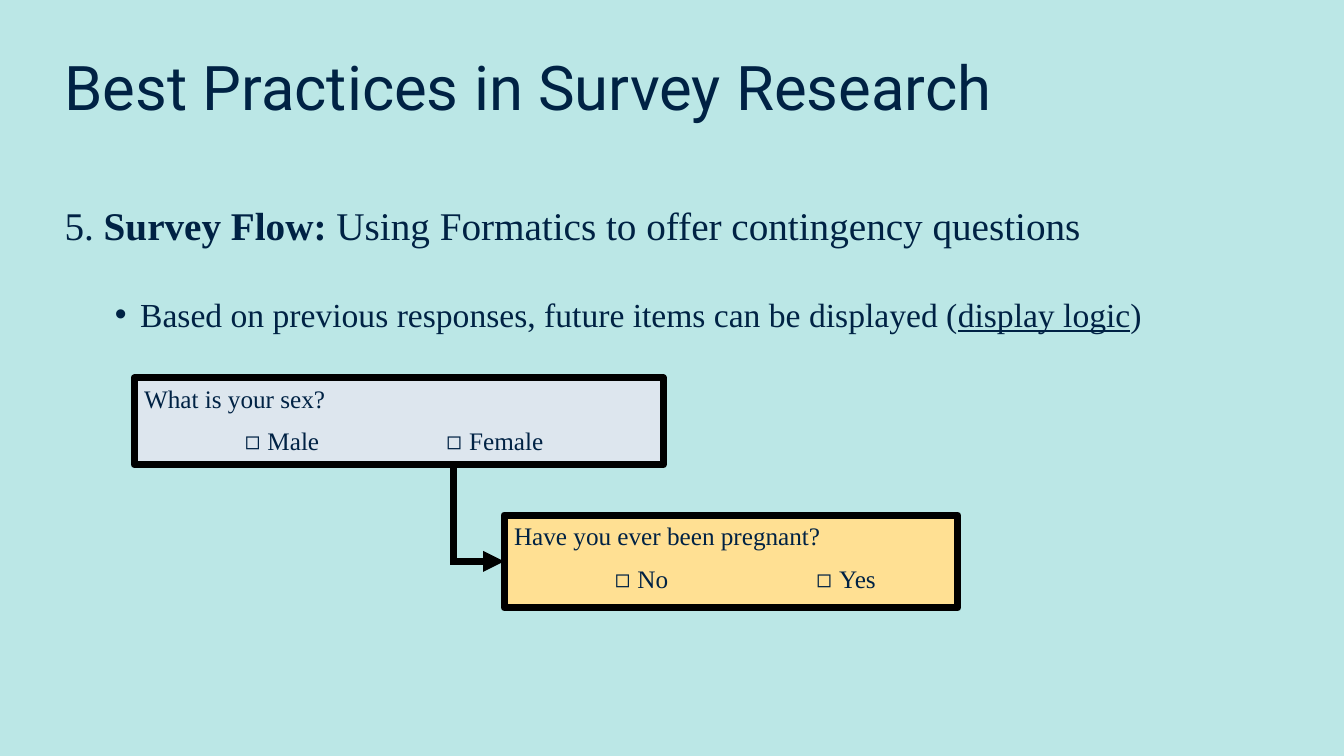
from lxml import etree
from pptx import Presentation
from pptx.dml.color import RGBColor
from pptx.enum import shapes, text
from pptx.oxml.ns import qn
from pptx.util import Inches, Pt

NAVY = RGBColor(0x00, 0x22, 0x44)
BLACK = RGBColor(0x00, 0x00, 0x00)
AQUA = RGBColor(0xBB, 0xE7, 0xE6)
PALE_BLUE = RGBColor(0xDD, 0xE6, 0xEE)
YELLOW = RGBColor(0xFF, 0xE0, 0x93)
SERIF = "Times New Roman"
BORDER = Pt(5)

# Content: text pieces are (text, style)
TITLE = "Best Practices in Survey Research"
HEADING = [("5. ", None), ("Survey Flow: ", "bold"),
           ("Using Formatics to offer contingency questions", None)]
BULLET = [("Based on previous responses, future items can be displayed (", None),
          ("display logic", "underline"), (")", None)]
QUESTIONS = [  # question, options, fill, (left, top, width, height)
    ("What is your sex?", ["Male", "Female"], PALE_BLUE, (1.33, 3.75, 5.25, 0.86)),
    ("Have you ever been pregnant?", ["No", "Yes"], YELLOW, (5, 5.11, 4.5, 0.92)),
]
OPTION_TABS = [1, 3]
BRANCH_X = 4.5


def set_font(paragraph, size, name=SERIF):
    paragraph.font.size = Pt(size)
    paragraph.font.name = name
    paragraph.font.color.rgb = NAVY


def add_runs(paragraph, pieces):
    for words, style in pieces:
        run = paragraph.add_run()
        run.text = words
        if style == "bold":
            run.font.bold = True
        elif style == "underline":
            run.font.underline = True


def set_bullet(paragraph, character, margin, indent):
    properties = paragraph._p.get_or_add_pPr()
    properties.set("marL", str(Inches(margin)))
    properties.set("indent", str(Inches(indent)))
    if character:
        etree.SubElement(properties, qn("a:buFont")).set("typeface", "Arial")
        etree.SubElement(properties, qn("a:buChar")).set("char", character)
    else:
        etree.SubElement(properties, qn("a:buNone"))


def place(shape, left, top, width, height):
    shape.left, shape.top = Inches(left), Inches(top)
    shape.width, shape.height = Inches(width), Inches(height)


def add_question(slide, question, options, fill, box):
    shape = slide.shapes.add_shape(shapes.MSO_SHAPE.RECTANGLE, *map(Inches, box))
    shape.shadow.inherit = False
    shape.fill.solid()
    shape.fill.fore_color.rgb = fill
    shape.line.color.rgb = BLACK
    shape.line.width = BORDER
    frame = shape.text_frame
    frame.word_wrap = True
    frame.vertical_anchor = text.MSO_ANCHOR.TOP

    prompt = frame.paragraphs[0]
    prompt.text = question
    choices = frame.add_paragraph()
    choices.space_before = Pt(9)
    tabs = etree.SubElement(choices._p.get_or_add_pPr(), qn("a:tabLst"))
    for position in OPTION_TABS:
        tab = etree.SubElement(tabs, qn("a:tab"))
        tab.set("pos", str(Inches(position)))
        tab.set("algn", "l")
    for option in options:
        add_runs(choices, [("\t", None), ("◻ ", None), (option, None)])
        choices.runs[-2].font.name = "Arial"
    for paragraph in (prompt, choices):
        paragraph.alignment = text.PP_ALIGN.LEFT
        set_font(paragraph, 18)


def add_line(slide, start, end, arrow=False):
    line = slide.shapes.add_connector(
        shapes.MSO_CONNECTOR.STRAIGHT, *map(Inches, start + end))
    line.line.color.rgb = BLACK
    line.line.width = BORDER
    if arrow:
        tail = etree.SubElement(line.line._get_or_add_ln(), qn("a:tailEnd"))
        tail.set("type", "triangle")
    etree.SubElement(line._element.spPr, qn("a:effectLst"))


def main():
    presentation = Presentation()
    presentation.slide_width = Inches(13.33)
    presentation.slide_height = Inches(7.5)
    slide = presentation.slides.add_slide(presentation.slide_layouts[1])
    slide.background.fill.solid()
    slide.background.fill.fore_color.rgb = AQUA

    # Title
    title = slide.shapes.title
    place(title, 0.54, 0.17, 11.5, 1.45)
    title.text_frame.text = TITLE
    title.text_frame.auto_size = text.MSO_AUTO_SIZE.NONE
    title.text_frame.vertical_anchor = text.MSO_ANCHOR.MIDDLE
    paragraph = title.text_frame.paragraphs[0]
    paragraph.alignment = text.PP_ALIGN.LEFT
    paragraph.line_spacing = 0.9
    set_font(paragraph, 44, "Roboto")

    # Heading and bullet
    body = slide.placeholders[1]
    place(body, 0.54, 2, 11.87, 4.76)
    frame = body.text_frame
    frame.auto_size = text.MSO_AUTO_SIZE.NONE
    heading, bullet = frame.paragraphs[0], frame.add_paragraph()
    bullet.level = 1
    set_bullet(heading, None, 0, 0)
    set_bullet(bullet, "•", 0.75, -0.25)
    for paragraph, pieces, size, gap in ((heading, HEADING, 28, 0),
                                         (bullet, BULLET, 24, 35)):
        add_runs(paragraph, pieces)
        paragraph.line_spacing = 0.9
        paragraph.space_before = Pt(gap)
        set_font(paragraph, size)

    # Question boxes
    for question in QUESTIONS:
        add_question(slide, *question)

    # Branch from the first question to the second
    _, top, _, height = QUESTIONS[0][3]
    left, next_top, _, next_height = QUESTIONS[1][3]
    middle = next_top + next_height / 2
    add_line(slide, (BRANCH_X, top + height), (BRANCH_X, middle + 0.04))
    add_line(slide, (BRANCH_X, middle), (left, middle), arrow=True)

    presentation.save("out.pptx")


if __name__ == "__main__":
    main()
